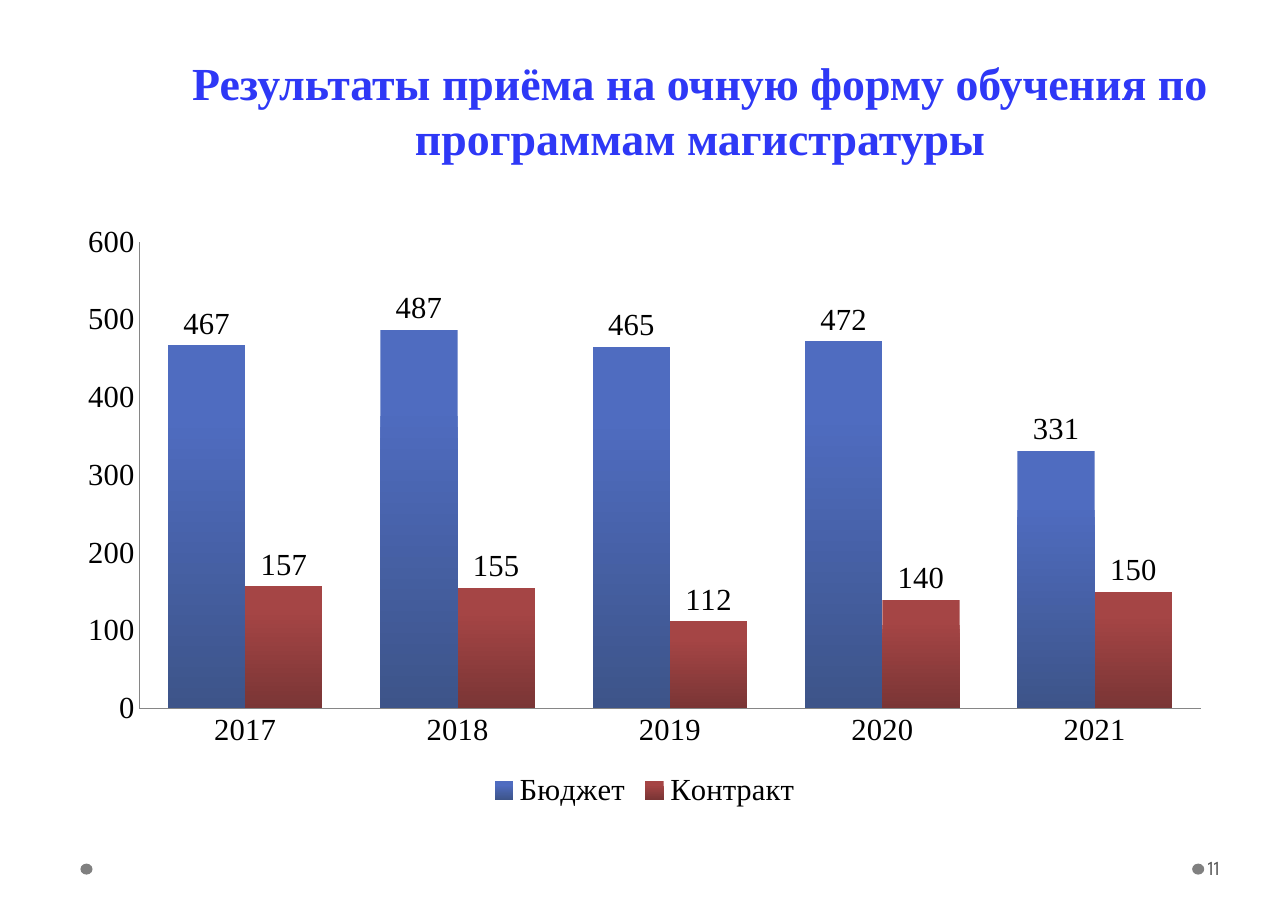
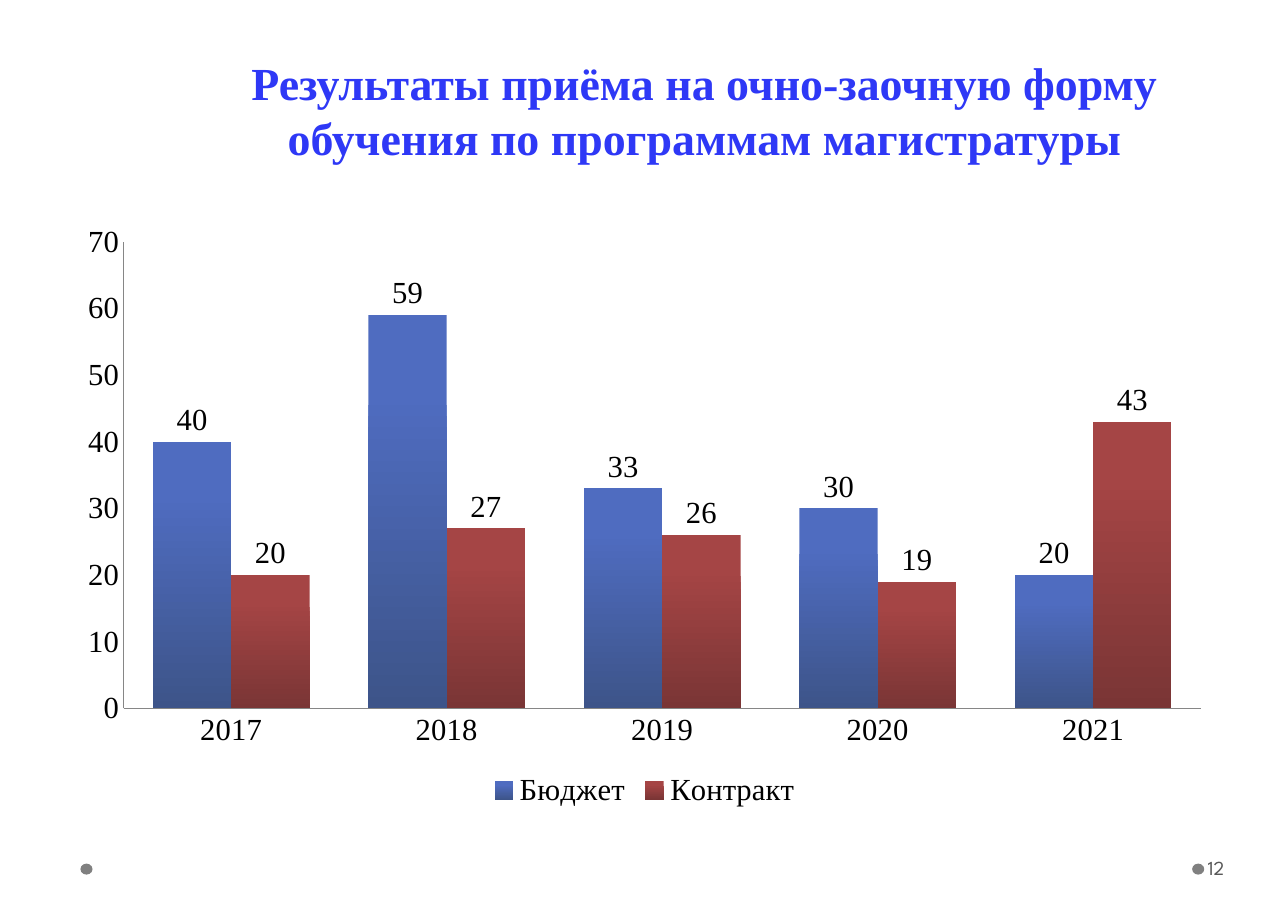
from pptx import Presentation
from pptx import util as u
from pptx.chart.data import CategoryChartData
from pptx.dml.color import RGBColor
from pptx.enum import chart as ch, shapes, text

COLOURS = {
    "title": "2E38F6", "text": "000000", "number": "595959",
    "dot": "808080", "axis": "868686",
}
# Top and bottom colour of the columns of each series
SERIES = {"Бюджет": ("4F6CC0", "3D5489"), "Контракт": ("A54545", "7A3535")}
YEARS = ["2017", "2018", "2019", "2020", "2021"]
SERIF, SANS = "Times New Roman", "League Spartan"


def rgb(name):
    return RGBColor.from_string(COLOURS.get(name, name))


def write(frame, content, font, size, colour, bold=False, align=None,
          anchor=text.MSO_ANCHOR.MIDDLE, insets=(0.1, 0.05, 0.1, 0.05),
          spacing=None):
    """Fill a text frame with one formatted paragraph."""
    frame.word_wrap = True
    frame.auto_size = text.MSO_AUTO_SIZE.NONE
    frame.vertical_anchor = anchor
    (frame.margin_left, frame.margin_top,
     frame.margin_right, frame.margin_bottom) = map(u.Inches, insets)
    para = frame.paragraphs[0]
    para.alignment = align
    para.line_spacing = spacing
    span = para.add_run()
    span.text = content
    span.font.name, span.font.size, span.font.bold = font, u.Pt(size), bold
    span.font.color.rgb = rgb(colour)


class Report:
    def __init__(self):
        self.deck = Presentation()
        self.deck.slide_width = u.Inches(11.69)
        self.deck.slide_height = u.Inches(8.27)
        self.slide = None

    def start_slide(self, number):
        self.slide = self.deck.slides.add_slide(self.deck.slide_layouts[5])
        for left in (10.82, 0.73):
            self.dot(left)
        box = self.slide.shapes.add_textbox(
            *map(u.Inches, (10.93, 7.66, 0.72, 0.44)))
        write(box.text_frame, str(number), SANS, 13, "number",
              insets=(0.03, 0.05, 0.05, 0.05))

    def dot(self, left):
        dot = self.slide.shapes.add_shape(
            shapes.MSO_SHAPE.OVAL, *map(u.Inches, (left, 7.84, 0.11, 0.1)))
        dot.shadow.inherit = False
        dot.fill.solid()
        dot.fill.fore_color.rgb = rgb("dot")
        dot.line.fill.background()

    def title(self, content, left):
        title = self.slide.shapes.title
        title.left, title.top = u.Inches(left), u.Inches(0.45)
        title.width, title.height = u.Inches(11.12 - left), u.Inches(1.1)
        write(title.text_frame, content, SERIF, 30, "title", bold=True,
              align=text.PP_ALIGN.CENTER, anchor=text.MSO_ANCHOR.BOTTOM,
              insets=(0.11, 0.05, 0.11, 0.05), spacing=u.Pt(36))

    def columns(self, rows, top, step):
        data = CategoryChartData()
        data.categories = YEARS
        for name, values in zip(SERIES, rows):
            data.add_series(name, values)
        chart = self.slide.shapes.add_chart(
            ch.XL_CHART_TYPE.COLUMN_CLUSTERED,
            *map(u.Inches, (0.59, 1.93, 10.52, 5.46)), data).chart
        chart.has_title = False
        chart.font.name, chart.font.size = SERIF, u.Pt(20)
        chart.font.color.rgb = rgb("text")

        # Legend and axes
        chart.has_legend = True
        chart.legend.position = ch.XL_LEGEND_POSITION.BOTTOM
        chart.legend.include_in_layout = False
        for axis in (chart.category_axis, chart.value_axis):
            axis.has_major_gridlines = False
            axis.major_tick_mark = ch.XL_TICK_MARK.NONE
            axis.minor_tick_mark = ch.XL_TICK_MARK.NONE
            axis.format.line.color.rgb = rgb("axis")
            axis.format.line.width = u.Pt(0.75)
        chart.value_axis.minimum_scale = 0
        chart.value_axis.maximum_scale = top
        chart.value_axis.major_unit = step

        # Columns and their values
        plot = chart.plots[0]
        plot.gap_width, plot.overlap, plot.vary_by_categories = 75, 0, False
        plot.has_data_labels = True
        plot.data_labels.show_value = True
        plot.data_labels.position = ch.XL_LABEL_POSITION.OUTSIDE_END
        for series, shades in zip(plot.series, SERIES.values()):
            series.invert_if_negative = False
            fill = series.format.fill
            fill.gradient()
            fill.gradient_angle = 270
            for stop, shade, position in zip(fill.gradient_stops, shades,
                                             (0.2, 1)):
                stop.color.rgb = rgb(shade)
                stop.position = position


def main():
    report = Report()

    # Full-time study
    report.start_slide(11)
    report.columns([(467, 487, 465, 472, 331), (157, 155, 112, 140, 150)],
                   top=600, step=100)
    report.title("Результаты приёма на очную форму обучения по программам "
                 "магистратуры", left=1.59)

    # Part-time study
    report.start_slide(12)
    report.columns([(40, 59, 33, 30, 20), (20, 27, 26, 19, 43)],
                   top=70, step=10)
    report.title("Результаты приёма на очно-заочную форму обучения по "
                 "программам магистратуры", left=1.67)

    report.deck.save("out.pptx")


if __name__ == "__main__":
    main()
